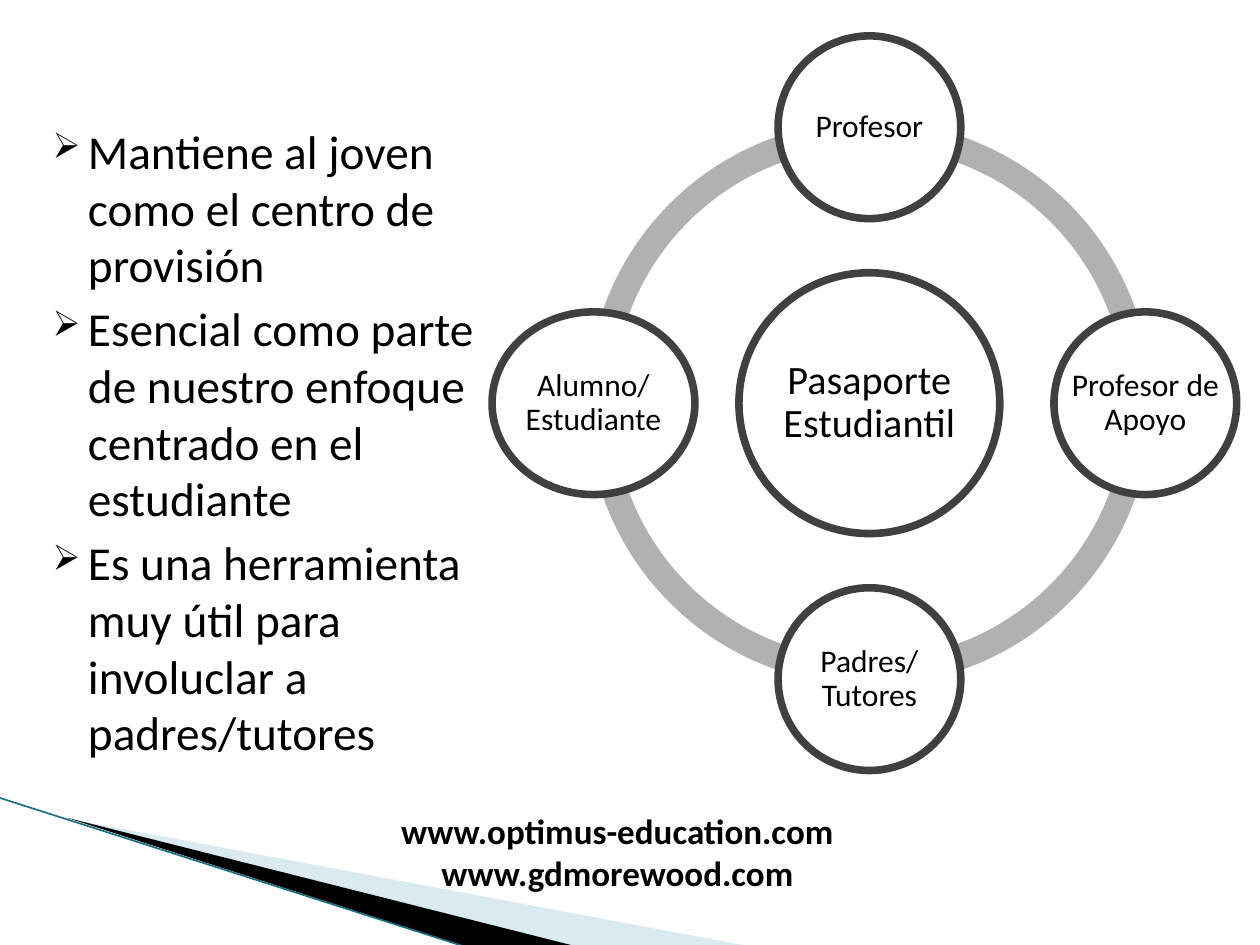
from typing import NamedTuple

from lxml.etree import SubElement
from pptx import Presentation
from pptx.dml.color import RGBColor
from pptx.enum.shapes import MSO_CONNECTOR, MSO_SHAPE
from pptx.enum.text import MSO_ANCHOR, PP_ALIGN
from pptx.oxml.ns import qn
from pptx.util import Inches, Pt

BLACK = RGBColor(0x00, 0x00, 0x00)
WHITE = RGBColor(0xFF, 0xFF, 0xFF)
DARK = RGBColor(0x40, 0x40, 0x40)
GRAY = RGBColor(0xB1, 0xB1, 0xB1)
PALE = RGBColor(0xA0, 0xCB, 0xDC)
TEAL = RGBColor(0x1B, 0x6F, 0x83)
FONT = "Calibri"


class Node(NamedTuple):
    text: str
    x: float
    y: float
    wide: float
    high: float
    size: int


class Wedge(NamedTuple):
    points: list[tuple[float, float]]
    color: RGBColor
    alpha: int


MID_X, MID_Y = 6.9, 3.2
REACH = 2.19
RING = 4.48
NODES = [
    Node("Pasaporte Estudiantil", MID_X, MID_Y, 2.07, 2.07, 23),
    Node("Profesor", MID_X, MID_Y - REACH, 1.45, 1.45, 18),
    Node("Profesor de Apoyo", MID_X + REACH, MID_Y, 1.45, 1.45, 18),
    Node("Padres/ Tutores", MID_X, MID_Y + REACH, 1.45, 1.45, 18),
    Node("Alumno/ Estudiante", MID_X - REACH, MID_Y, 1.61, 1.45, 18),
]
WEDGES = [
    Wedge([(0.55, 6.5), (5.95, 7.51), (4.56, 7.51)], PALE, 40),
    Wedge([(0.53, 6.49), (4.57, 7.51), (3.72, 7.52)], BLACK, 100),
]
ITEMS = [
    "Mantiene al joven como el centro de provisión",
    "Esencial como parte de nuestro enfoque centrado en el estudiante",
    "Es una herramienta muy útil para involuclar a padres/tutores",
]


def add_run(para, text: str, size: int, bold: bool = False) -> None:
    run = para.add_run()
    run.text = text
    run.font.name = FONT
    run.font.size = Pt(size)
    run.font.bold = bold
    run.font.color.rgb = BLACK


def add_box(slide, x: float, y: float, wide: float, high: float, anchor):
    box = slide.shapes.add_textbox(Inches(x), Inches(y), Inches(wide), Inches(high))
    frame = box.text_frame
    frame.word_wrap = True
    frame.vertical_anchor = anchor
    return frame


def paint(shape, color: RGBColor) -> None:
    shape.shadow.inherit = False
    shape.fill.solid()
    shape.fill.fore_color.rgb = color
    shape.line.fill.background()


def draw_wedge(slide, wedge: Wedge) -> None:
    first, *rest = [(Inches(x), Inches(y)) for x, y in wedge.points]
    pen = slide.shapes.build_freeform(*first)
    pen.add_line_segments(rest, close=True)
    shape = pen.convert_to_shape()
    paint(shape, wedge.color)
    if wedge.alpha < 100:
        tint = next(shape.element.spPr.iter(qn("a:srgbClr")))
        SubElement(tint, qn("a:alpha")).set("val", str(wedge.alpha * 1000))


def draw_edge(slide) -> None:
    edge = slide.shapes.add_connector(
        MSO_CONNECTOR.STRAIGHT, Inches(-0.01), Inches(6.33), Inches(3.71), Inches(7.52)
    )
    edge.line.color.rgb = TEAL
    edge.line.width = Pt(0.95)
    SubElement(edge.element.spPr, qn("a:effectLst"))


def draw_arc(slide, start: int) -> None:
    arc = slide.shapes.add_shape(
        MSO_SHAPE.BLOCK_ARC,
        Inches(MID_X - RING / 2), Inches(MID_Y - RING / 2), Inches(RING), Inches(RING),
    )
    paint(arc, GRAY)
    stop = (start + 90) % 360
    for spot, value in enumerate((start * 0.6, stop * 0.6, 0.046)):
        arc.adjustments[spot] = value


def draw_node(slide, node: Node) -> None:
    left, top = node.x - node.wide / 2, node.y - node.high / 2
    disc = slide.shapes.add_shape(
        MSO_SHAPE.OVAL, Inches(left), Inches(top), Inches(node.wide), Inches(node.high)
    )
    paint(disc, WHITE)
    disc.line.color.rgb = DARK
    disc.line.width = Pt(4.33)
    frame = add_box(slide, left, top, node.wide, node.high, MSO_ANCHOR.MIDDLE)
    frame.margin_left = frame.margin_right = Inches(0.03)
    frame.margin_top = frame.margin_bottom = Inches(0.03)
    para = frame.paragraphs[0]
    para.alignment = PP_ALIGN.CENTER
    para.line_spacing = 0.9
    add_run(para, node.text, node.size)


def draw_list(slide, items: list[str]) -> None:
    frame = add_box(slide, 0.2, 0.92, 3.7, 5.35, MSO_ANCHOR.TOP)
    for spot, item in enumerate(items):
        para = frame.add_paragraph() if spot else frame.paragraphs[0]
        if spot:
            para.space_before = Pt(4)
        props = para._p.get_or_add_pPr()
        props.set("marL", str(Inches(0.4)))
        props.set("indent", str(Inches(-0.28)))
        SubElement(props, qn("a:buSzPct")).set("val", "75000")
        SubElement(props, qn("a:buChar")).set("char", "➢")
        add_run(para, item, 27)


def draw_foot(slide) -> None:
    frame = add_box(slide, 2.95, 6.74, 3.9, 0.4, MSO_ANCHOR.BOTTOM)
    para = frame.paragraphs[0]
    para.alignment = PP_ALIGN.CENTER
    add_run(para, "www.optimus-education.com www.gdmorewood.com", 20, True)


def main() -> None:
    deck = Presentation()
    deck.slide_width, deck.slide_height = Inches(10), Inches(7.5)
    slide = deck.slides.add_slide(deck.slide_layouts[6])
    for wedge in WEDGES:
        draw_wedge(slide, wedge)
    draw_edge(slide)
    draw_foot(slide)
    draw_list(slide, ITEMS)
    for start in range(0, 360, 90):
        draw_arc(slide, start)
    for node in NODES:
        draw_node(slide, node)
    deck.save("out.pptx")


if __name__ == "__main__":
    main()
